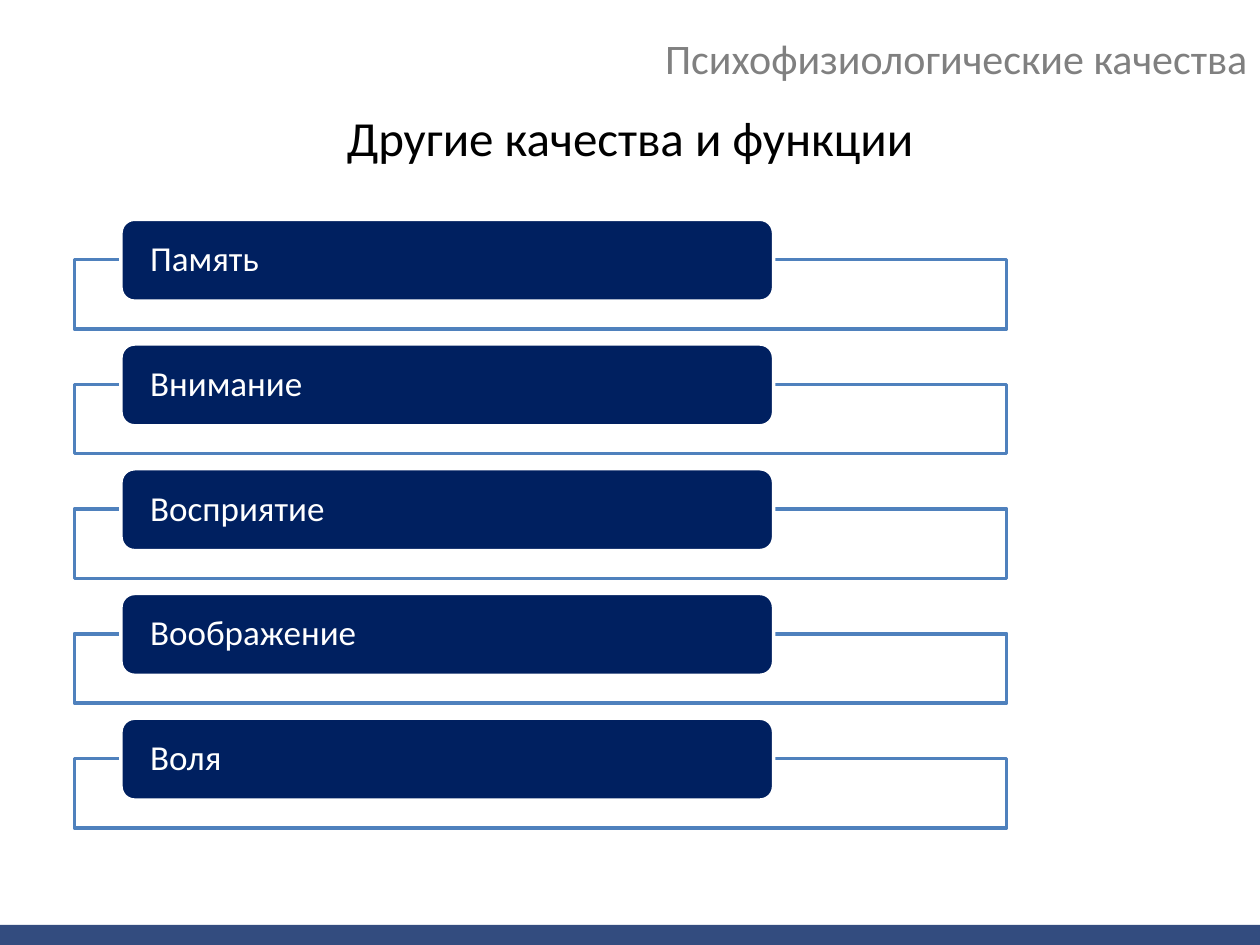
from lxml import etree
from pptx import Presentation
from pptx.dml.color import RGBColor
from pptx.enum import shapes, text
from pptx.oxml.ns import qn
from pptx.util import Inches, Pt

FONT = "Calibri"
NAVY = RGBColor(0x00, 0x20, 0x60)
BLUE = RGBColor(0x4F, 0x81, 0xBD)
GRAY = RGBColor(0x80, 0x80, 0x80)
BLACK = RGBColor(0x00, 0x00, 0x00)
WHITE = RGBColor(0xFF, 0xFF, 0xFF)

QUALITIES = ["Память", "Внимание", "Восприятие", "Воображение", "Воля"]
FIRST_TOP = 1.74
ROW_PITCH = 0.99
FRAME_DROP = 0.32


def write_text(shape, words, size, color, align):
    frame = shape.text_frame
    frame.word_wrap = True
    frame.vertical_anchor = text.MSO_ANCHOR.MIDDLE
    para = frame.paragraphs[0]
    para.alignment = align
    span = para.add_run()
    span.text = words
    span.font.name = FONT
    span.font.size = Pt(size)
    span.font.color.rgb = color
    return frame


def add_heading(page, top, height, words, size, color, align):
    box = page.shapes.add_textbox(0, Inches(top), Inches(10), Inches(height))
    write_text(box, words, size, color, align)


def add_block(page, kind, left, top, width, height, fill, line=None, opacity=100):
    block = page.shapes.add_shape(
        kind, Inches(left), Inches(top), Inches(width), Inches(height))
    block.shadow.inherit = False
    block.fill.solid()
    block.fill.fore_color.rgb = fill
    if opacity < 100:
        color = block.fill._xPr.find(qn("a:solidFill"))[0]
        etree.SubElement(color, qn("a:alpha"), val=str(opacity * 1000))
    if line is None:
        block.line.fill.background()
    else:
        block.line.color.rgb = line
        block.line.width = Pt(2)
    return block


def add_quality(page, top, words):
    # Outlined frame behind, rounded label in front
    add_block(page, shapes.MSO_SHAPE.RECTANGLE,
              0.59, top + FRAME_DROP, 7.4, 0.55, WHITE, BLUE, 90)
    label = add_block(page, shapes.MSO_SHAPE.ROUNDED_RECTANGLE,
                      0.96, top, 5.18, 0.65, NAVY, WHITE)
    frame = write_text(label, words, 20, WHITE, text.PP_ALIGN.LEFT)
    frame.margin_left = frame.margin_right = Inches(0.2)
    frame.margin_top = frame.margin_bottom = 0
    frame.paragraphs[0].line_spacing = 0.9


def main():
    deck = Presentation()
    deck.slide_width, deck.slide_height = Inches(10), Inches(7.5)
    page = deck.slides.add_slide(deck.slide_layouts[6])

    # Headings
    add_heading(page, 0, 0.92, "Психофизиологические качества", 24, GRAY,
                text.PP_ALIGN.RIGHT)
    add_heading(page, 0.8, 0.57, "Другие качества и функции", 28, BLACK,
                text.PP_ALIGN.CENTER)

    # Footer band
    add_block(page, shapes.MSO_SHAPE.RECTANGLE,
              -0.12, 7.34, 10.24, 0.16, NAVY, opacity=80)

    # List of qualities
    for row, words in enumerate(QUALITIES):
        add_quality(page, FIRST_TOP + row * ROW_PITCH, words)

    deck.save("out.pptx")


if __name__ == "__main__":
    main()
